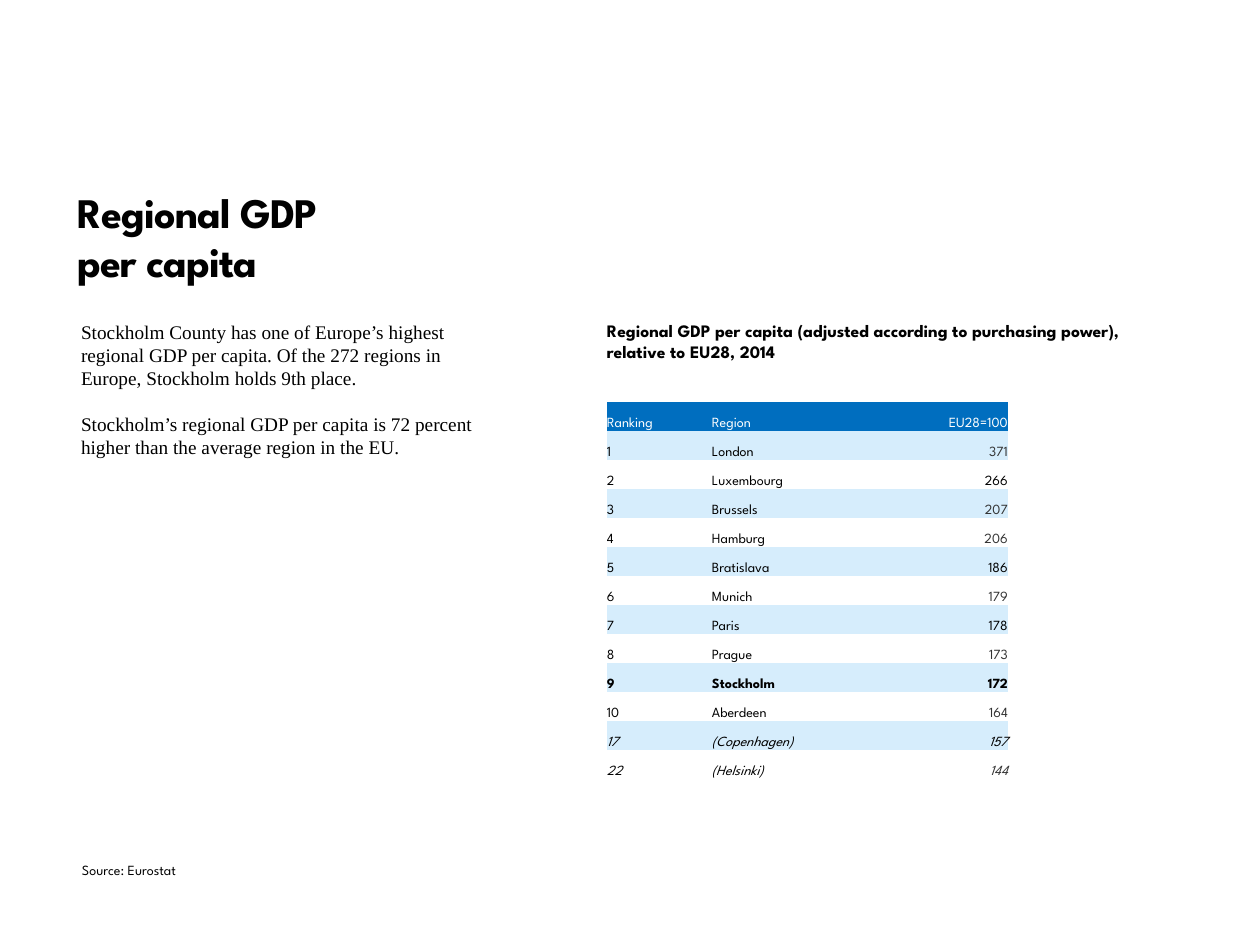
import pptx
import pptx.dml.color
import pptx.enum.text
import pptx.util

PX = 914400 / 126
SANS, SERIF = "League Spartan", "Times New Roman"
BLACK, GREY, WHITE = "000000", "333333", "FFFFFF"
BLUE, PALE = "006EBF", "D6EDFC"
NO_STYLE = "{2D5ABB26-0587-4C30-8999-92F81FD0307C}"

# rank, region, index, colour of the index
RANKING = [
    ("1", "London", "371", GREY),
    ("2", "Luxembourg", "266", BLACK),
    ("3", "Brussels", "207", GREY),
    ("4", "Hamburg", "206", GREY),
    ("5", "Bratislava", "186", BLACK),
    ("6", "Munich", "179", GREY),
    ("7", "Paris", "178", BLACK),
    ("8", "Prague", "173", GREY),
    ("9", "Stockholm", "172", BLACK),
    ("10", "Aberdeen", "164", GREY),
    ("17", "(Copenhagen)", "157", BLACK),
    ("22", "(Helsinki)", "144", GREY),
]


def px(length):
    return pptx.util.Emu(round(length * PX))


def rgb(value):
    return pptx.dml.color.RGBColor.from_string(value)


def add_run(paragraph, text, size, face=SANS, color=BLACK, bold=False, italic=False):
    run = paragraph.add_run()
    run.text = text
    font = run.font
    font.name, font.size = face, pptx.util.Pt(size)
    font.bold, font.italic = bold, italic
    font.color.rgb = rgb(color)
    return run


def add_frame(slide, left, top, width, height):
    """Add a wrapping text box without insets and return its text frame."""
    frame = slide.shapes.add_textbox(px(left), px(top), px(width), px(height)).text_frame
    frame.word_wrap = True
    frame.margin_left = frame.margin_top = frame.margin_right = frame.margin_bottom = 0
    return frame


def add_title(slide, left, top, width, height):
    paragraph = add_frame(slide, left, top, width, height).paragraphs[0]
    paragraph.line_spacing = pptx.util.Pt(28)
    for number, line in enumerate(("Regional GDP", "per capita")):
        if number:
            paragraph.add_line_break()
        run = add_run(paragraph, line, 24, bold=True)
        run._r.get_or_add_rPr().set("spc", "-50")


def add_summary(slide, left, top, width, height):
    frame = add_frame(slide, left, top, width, height)
    leading = pptx.util.Pt(13.2)
    first, second = frame.paragraphs[0], frame.add_paragraph()
    first.line_spacing = second.line_spacing = leading
    first.space_after = leading
    add_run(first, "Stockholm County has one of Europe’s highest regional GDP per capita. "
            "Of the 272 regions in Europe, Stockholm holds 9th place.", 11, SERIF)
    add_run(second, "Stockholm’s regional GDP per capita is 72 percent higher than "
            "the average region in the EU.", 11, SERIF)


def add_label(slide, left, top, width, height, text, size, bold=False):
    paragraph = add_frame(slide, left, top, width, height).paragraphs[0]
    paragraph.line_spacing = pptx.util.Pt(12)
    add_run(paragraph, text, size, bold=bold)


def fill_cell(cell, text, fill, color, right, bold, italic):
    cell.fill.solid()
    cell.fill.fore_color.rgb = rgb(fill)
    cell.margin_left = cell.margin_top = cell.margin_right = cell.margin_bottom = 0
    cell.vertical_anchor = pptx.enum.text.MSO_ANCHOR.BOTTOM
    paragraph = cell.text_frame.paragraphs[0]
    if right:
        paragraph.alignment = pptx.enum.text.PP_ALIGN.RIGHT
    add_run(paragraph, text, 8, color=color, bold=bold, italic=italic)


def add_ranking(slide, left, top, column_widths, row_height):
    rows = [("Ranking", "Region", "EU28=100", WHITE)] + RANKING
    table = slide.shapes.add_table(
        len(rows), len(column_widths), px(left), px(top),
        px(sum(column_widths)), px(row_height * len(rows))).table
    table.first_row = table.horz_banding = False
    table._tbl.tblPr[0].text = NO_STYLE
    for column, width in zip(table.columns, column_widths):
        column.width = px(width)
    for number, (*texts, index_color) in enumerate(rows):
        table.rows[number].height = px(row_height)
        header = number == 0
        fill = BLUE if header else PALE if number % 2 else WHITE
        label_color = WHITE if header else BLACK
        bold = texts[1] == "Stockholm"
        italic = texts[1].startswith("(")
        for position, text in enumerate(texts):
            is_index = position == 2
            fill_cell(table.cell(number, position), text, fill,
                      index_color if is_index else label_color, is_index, bold, italic)


def main():
    presentation = pptx.Presentation()
    presentation.slide_width, presentation.slide_height = px(1260), px(945)
    slide = presentation.slides.add_slide(presentation.slide_layouts[6])
    add_title(slide, 78, 188, 767, 111)
    add_summary(slide, 81, 320, 399, 164)
    add_label(slide, 607, 320, 523, 62,
              "Regional GDP per capita (adjusted according to purchasing power), "
              "relative to EU28, 2014", 10, bold=True)
    add_ranking(slide, 607, 402, (105, 195, 101), 29)
    add_label(slide, 82, 857, 111, 45, "Source: Eurostat", 8)
    presentation.save("out.pptx")


if __name__ == "__main__":
    main()
